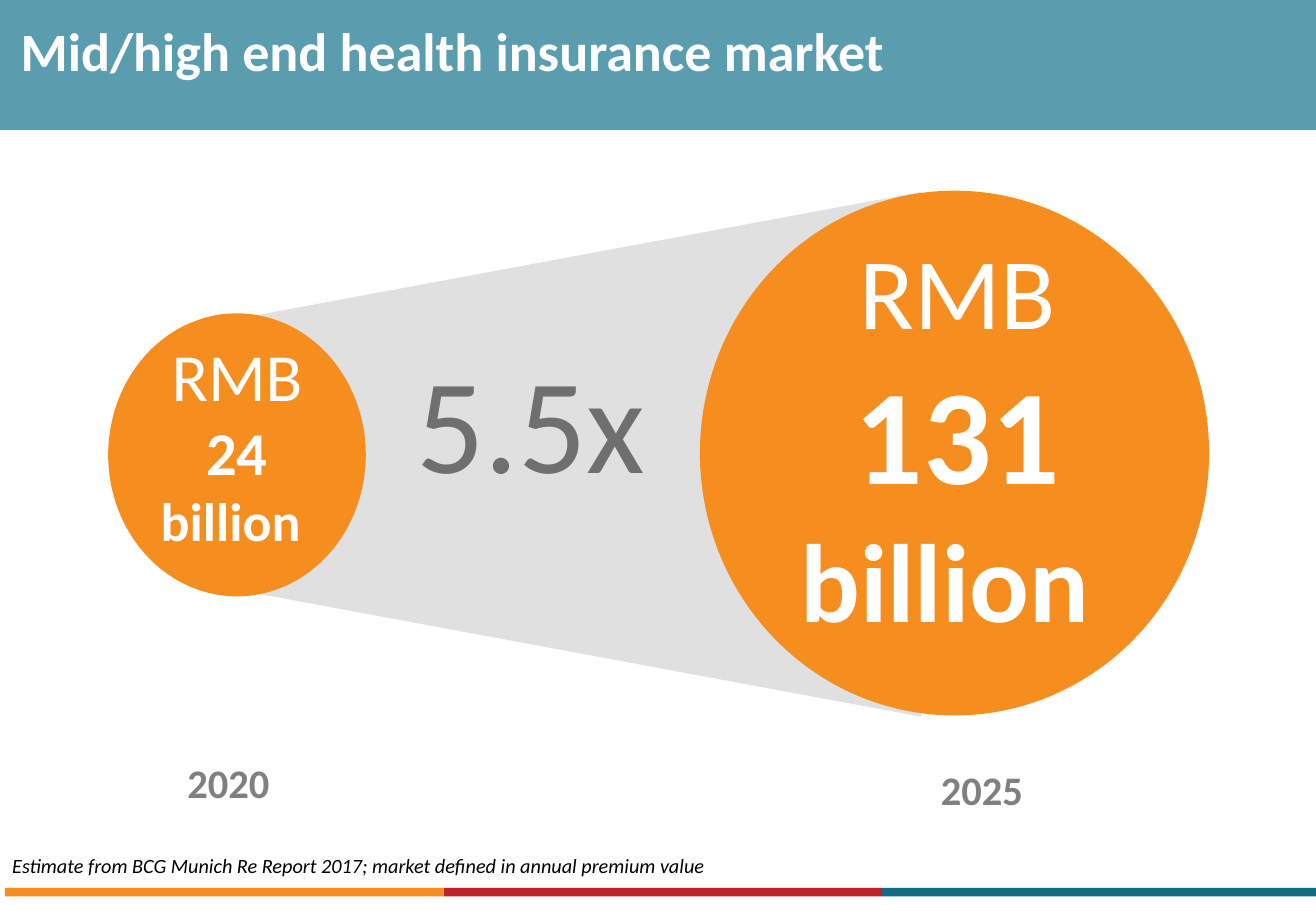
from lxml.etree import SubElement
from pptx import Presentation
from pptx.dml.color import RGBColor
from pptx.enum.shapes import MSO_SHAPE as Shape
from pptx.enum.text import MSO_ANCHOR as Anchor, MSO_AUTO_SIZE as AutoSize, PP_ALIGN as Align
from pptx.oxml.ns import qn
from pptx.util import Pt

PX = 9144
PLAIN_TABLE = "{2D5ABB26-0587-4C30-8999-92F81FD0307C}"
COLORS = {
    "band": "31859C", "orange": "F68D1F", "red": "C12026", "teal": "136B83",
    "funnel": "BFBFBF", "factor": "6F6F6F", "year": "808080",
    "white": "FFFFFF", "black": "000000",
}

deck = Presentation()
deck.slide_width, deck.slide_height = 1083 * PX, 750 * PX
page = deck.slides.add_slide(deck.slide_layouts[6])


def add_block(kind, left, top, width, height, color, opacity=100):
    block = page.shapes.add_shape(kind, left * PX, top * PX, width * PX, height * PX)
    block.shadow.inherit = False
    block.fill.solid()
    block.fill.fore_color.rgb = RGBColor.from_string(COLORS[color])
    block.line.fill.background()
    if opacity < 100:
        tint = block.fill._xPr.find(qn("a:solidFill"))[0]
        SubElement(tint, qn("a:alpha"), val=str(opacity * 1000))
    return block


def write(frame, color, lines, align=Align.CENTER, italic=False):
    frame.word_wrap = True
    for index, line in enumerate(lines):
        para = frame.add_paragraph() if index else frame.paragraphs[0]
        para.alignment = align
        for text, size, bold in line:
            span = para.add_run()
            span.text = text
            font = span.font
            font.name, font.size, font.bold, font.italic = "Calibri", Pt(size), bold, italic
            font.color.rgb = RGBColor.from_string(COLORS[color])


add_block(Shape.RECTANGLE, 0, -1, 1085, 108, "band", 80)
for index, color in enumerate(["orange", "red", "teal"]):
    add_block(Shape.RECTANGLE, 4 + 361 * index, 731, 361, 7, color)

funnel = add_block(Shape.TRAPEZOID, 251, 83, 432, 582, "funnel", 48)
funnel.rotation = 270
add_block(Shape.OVAL, 576, 157, 419, 432, "orange")
add_block(Shape.OVAL, 89, 258, 212, 233, "orange")

labels = [
    ((294, 274, 286, 145), "factor", [[("5.5x", 80, False)]]),
    ((74, 270, 242, 192), "white",
     [[("RMB", 40, False)], [("24", 36, True)], [("billion ", 32, True)]]),
    ((628, 183, 320, 357), "white",
     [[("RMB", 60, False)], [("131", 80, True), (" billion ", 66, True)]]),
    ((134, 619, 108, 50), "year", [[("2020", 24, True)]]),
    ((754, 625, 108, 50), "year", [[("2025", 24, True)]]),
]
for place, color, lines in labels:
    label = page.shapes.add_textbox(*[length * PX for length in place])
    write(label.text_frame, color, lines)
    label.text_frame.auto_size = AutoSize.SHAPE_TO_FIT_TEXT

heading = "Mid/high end health insurance market"
source = "Estimate from BCG Munich Re Report 2017; market defined in annual premium value"
tables = [
    ((6, -11, 858, 109), (11, 7, 11, 7), Anchor.MIDDLE, "white", (heading, 32, True), False),
    ((9, 702, 667, 21), (1, 1, 1, 0), Anchor.BOTTOM, "black", (source, 12, False), True),
]
for place, insets, anchor, color, words, italic in tables:
    table = page.shapes.add_table(1, 1, *[length * PX for length in place]).table
    table.first_row = table.horz_banding = False
    table._tbl.tblPr.find(qn("a:tableStyleId")).text = PLAIN_TABLE
    cell = table.cell(0, 0)
    cell.fill.background()
    cell.vertical_anchor = anchor
    cell.margin_left, cell.margin_top, cell.margin_right, cell.margin_bottom = [
        inset * PX for inset in insets]
    write(cell.text_frame, color, [[words]], Align.LEFT, italic)

deck.save("out.pptx")
